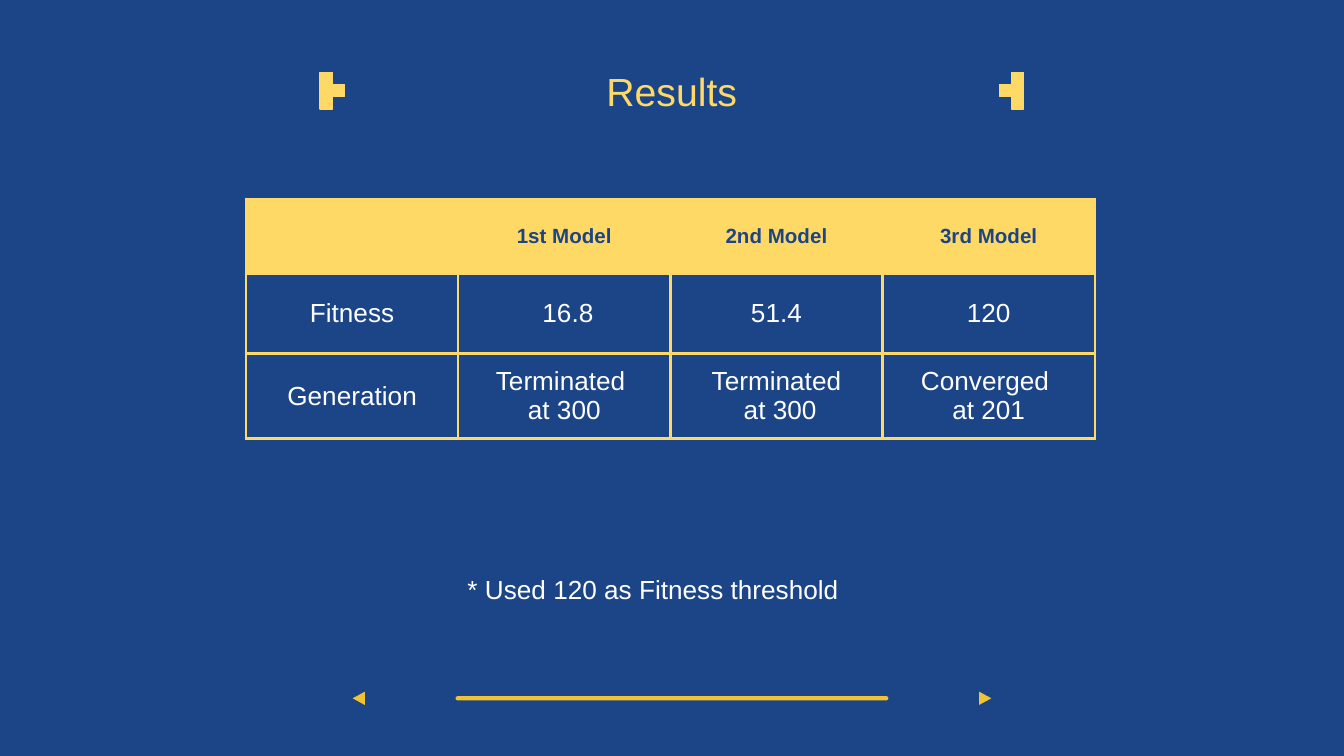
from dataclasses import dataclass

from lxml.etree import SubElement
from pptx import Presentation
from pptx.dml.color import RGBColor as Rgb
from pptx.enum.shapes import MSO_SHAPE as Shape
from pptx.enum.text import MSO_ANCHOR as Anchor, MSO_AUTO_SIZE as AutoSize, PP_ALIGN as Align
from pptx.oxml.ns import qn
from pptx.util import Cm, Pt

COLORS = {"blue": "1C4587", "yellow": "FFD966", "gold": "F1C232", "white": "FFFFFF"}
FONT = "Arial"
WIDTH, HEIGHT = 25.4, 14.29
INSET = 0.25
PIXEL = 0.23
NAV_Y = 13.2


@dataclass(frozen=True)
class TextStyle:
    size: float
    color: str
    bold: bool = False


@dataclass(frozen=True)
class Bracket:
    spine_x: float
    direction: int


@dataclass(frozen=True)
class Arrow:
    center_x: float
    rotation: int


TITLE = TextStyle(21, "yellow")
HEADER = TextStyle(11, "blue", True)
BODY = TextStyle(14, "white")

RESULTS = [
    ["", "1st Model", "2nd Model", "3rd Model"],
    ["Fitness", " 16.8", "51.4", "120"],
    ["Generation", "Terminated \nat 300", "Terminated\n at 300", "Converged \nat 201"],
]
ROW_HEIGHTS = [1.42, 1.5, 1.5]
COLUMN_WIDTH = 4.01
BRACKETS = [Bracket(6.05, 1), Bracket(WIDTH - 6.05 - PIXEL, -1)]
ARROWS = [Arrow(6.78, 270), Arrow(WIDTH - 6.78, 90)]


def rgb(name: str) -> Rgb:
    return Rgb.from_string(COLORS[name])


def set_insets(holder) -> None:
    holder.margin_left = holder.margin_right = Cm(INSET)
    holder.margin_top = holder.margin_bottom = Cm(INSET)


def write(frame, text: str, style: TextStyle) -> None:
    for index, line in enumerate(text.split("\n")):
        paragraph = frame.add_paragraph() if index else frame.paragraphs[0]
        paragraph.alignment = Align.CENTER
        run = paragraph.add_run()
        run.text = line
        run.font.name = FONT
        run.font.size = Pt(style.size)
        run.font.bold = style.bold
        run.font.color.rgb = rgb(style.color)


def add_borders(cell, color: str, points: float) -> None:
    properties = cell._tc.get_or_add_tcPr()
    for index, side in enumerate(("lnL", "lnR", "lnT", "lnB")):
        line = SubElement(properties, qn(f"a:{side}"), w=str(Pt(points)))
        fill = SubElement(line, qn("a:solidFill"))
        SubElement(fill, qn("a:srgbClr"), val=COLORS[color])
        properties.insert(index, line)


def add_results_table(slide) -> None:
    columns = len(RESULTS[0])
    table = slide.shapes.add_table(
        len(RESULTS), columns, Cm(4.65), Cm(3.76),
        Cm(COLUMN_WIDTH * columns), Cm(sum(ROW_HEIGHTS)),
    ).table
    for column in table.columns:
        column.width = Cm(COLUMN_WIDTH)
    for row_index, (height, texts) in enumerate(zip(ROW_HEIGHTS, RESULTS)):
        table.rows[row_index].height = Cm(height)
        for column_index, text in enumerate(texts):
            cell = table.cell(row_index, column_index)
            cell.vertical_anchor = Anchor.MIDDLE
            set_insets(cell)
            if row_index == 0:
                cell.fill.solid()
                cell.fill.fore_color.rgb = rgb("yellow")
            else:
                cell.fill.background()
            add_borders(cell, "yellow", 1.5)
            if text:
                write(cell.text_frame, text, HEADER if row_index == 0 else BODY)


def add_filled(shapes, kind: Shape, x: float, y: float, w: float, h: float, color: str):
    shape = shapes.add_shape(kind, Cm(x), Cm(y), Cm(w), Cm(h))
    shape.shadow.inherit = False
    shape.fill.solid()
    shape.fill.fore_color.rgb = rgb(color)
    shape.line.fill.background()
    return shape


def add_bracket(slide, bracket: Bracket) -> None:
    group = slide.shapes.add_group_shape()
    for column, row in [(0, 2), (0, 1), (0, 0), (1, 1)]:
        x = bracket.spine_x + bracket.direction * column * PIXEL
        pixel = add_filled(group.shapes, Shape.RECTANGLE, x, 1.37 + row * PIXEL,
                           PIXEL, PIXEL, "yellow")
        pixel.line.color.rgb = rgb("yellow")
        pixel.line.width = Pt(0.75)


def add_navigation(slide) -> None:
    length, thickness = 8.18, 0.08
    bar = add_filled(slide.shapes, Shape.ROUNDED_RECTANGLE, (WIDTH - length) / 2,
                     NAV_Y - thickness / 2, length, thickness, "gold")
    bar.adjustments[0] = 0.5
    base, height = 0.25, 0.23
    for arrow in ARROWS:
        triangle = add_filled(slide.shapes, Shape.ISOSCELES_TRIANGLE,
                              arrow.center_x - base / 2, NAV_Y - height / 2,
                              base, height, "gold")
        triangle.rotation = arrow.rotation


def add_title(slide) -> None:
    title = slide.shapes.title
    title.left, title.top, title.width, title.height = Cm(0.86), Cm(0.81), Cm(23.67), Cm(1.6)
    frame = title.text_frame
    frame.auto_size = AutoSize.NONE
    frame.vertical_anchor = Anchor.BOTTOM
    set_insets(frame)
    write(frame, "Results", TITLE)


def add_footnote(slide) -> None:
    frame = slide.shapes.add_textbox(Cm(8.18), Cm(10.59), Cm(8.33), Cm(1.12)).text_frame
    frame.word_wrap = True
    frame.auto_size = AutoSize.SHAPE_TO_FIT_TEXT
    set_insets(frame)
    write(frame, "* Used 120 as Fitness threshold", BODY)


def main() -> None:
    deck = Presentation()
    deck.slide_width, deck.slide_height = Cm(WIDTH), Cm(HEIGHT)
    slide = deck.slides.add_slide(deck.slide_layouts[5])
    slide.background.fill.solid()
    slide.background.fill.fore_color.rgb = rgb("blue")
    add_title(slide)
    add_results_table(slide)
    add_navigation(slide)
    for bracket in BRACKETS:
        add_bracket(slide, bracket)
    add_footnote(slide)
    deck.save("out.pptx")


if __name__ == "__main__":
    main()
